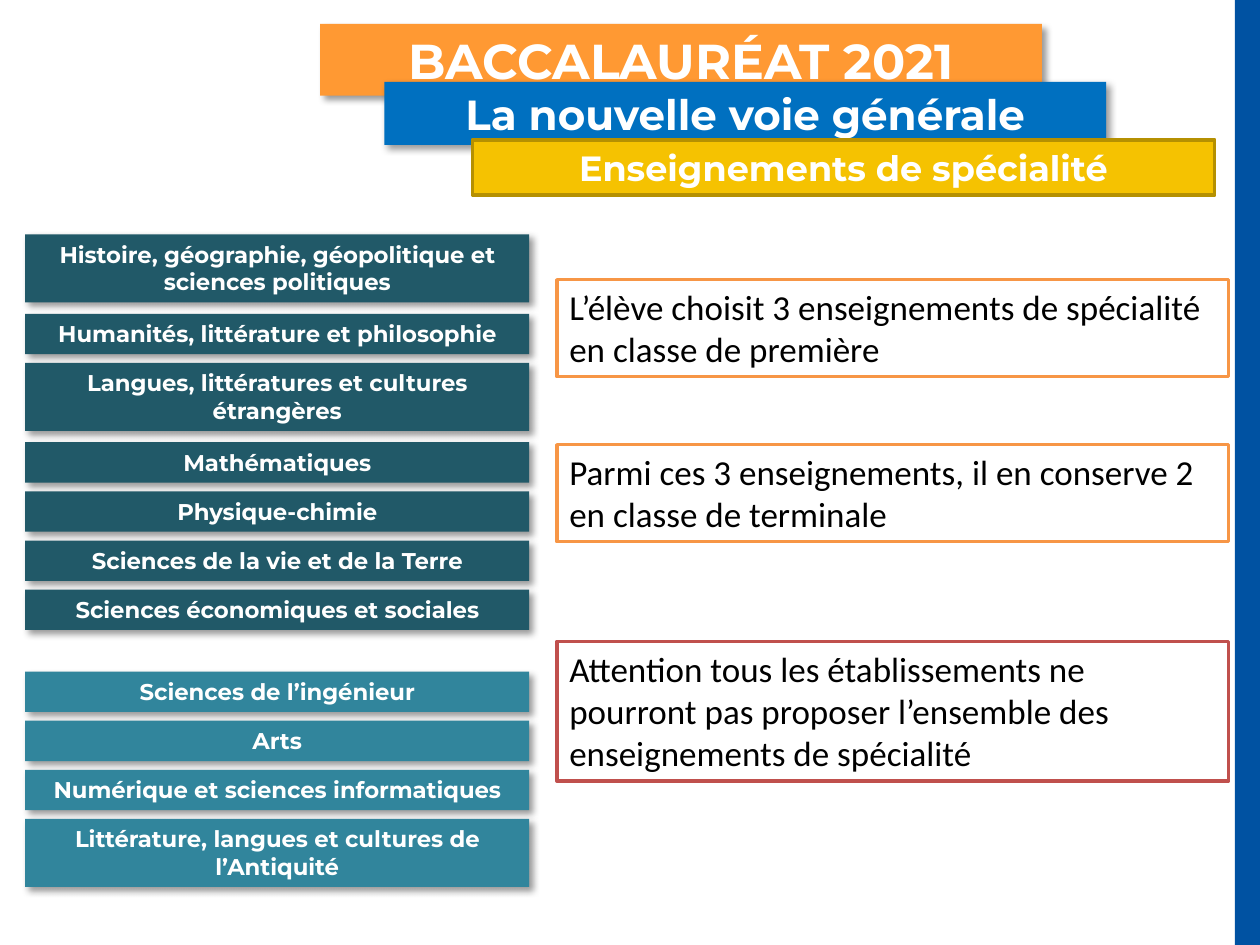
from lxml import etree
from pptx import Presentation
from pptx.dml.color import RGBColor
from pptx.enum.shapes import MSO_SHAPE
from pptx.enum.text import MSO_ANCHOR, MSO_AUTO_SIZE, PP_ALIGN
from pptx.oxml.ns import qn
from pptx.util import Inches, Pt

RECT = MSO_SHAPE.RECTANGLE
TOP = MSO_ANCHOR.TOP
GROW = MSO_AUTO_SIZE.SHAPE_TO_FIT_TEXT
LEFT, CENTER = PP_ALIGN.LEFT, PP_ALIGN.CENTER

DARK_TEAL, TEAL = "215968", "31859C"
ORANGE, RED = "F79646", "C0504D"

# Title banners: text, position and size, fill, line, text size
BANNERS = [
    ("BACCALAURÉAT 2021", (2.54, 0.19, 5.73, 0.57), "FF9933", None, 28),
    ("La nouvelle voie générale", (3.05, 0.65, 5.73, 0.5), "0070C0", None, 24),
    ("Enseignements de spécialité", (3.75, 1.11, 5.89, 0.44), "F5C201", "B59001", 20),
]

# Subjects: text, number of lines
COMMON_SUBJECTS = [
    ("Histoire, géographie, géopolitique et sciences politiques", 2),
    ("Humanités, littérature et philosophie", 1),
    ("Langues, littératures et cultures étrangères", 2),
    ("Mathématiques", 1),
    ("Physique-chimie", 1),
    ("Sciences de la vie et de la Terre", 1),
    ("Sciences économiques et sociales", 1),
]
OTHER_SUBJECTS = [
    ("Sciences de l’ingénieur", 1),
    ("Arts", 1),
    ("Numérique et sciences informatiques", 1),
    ("Littérature, langues et cultures de l’Antiquité", 2),
]
SUBJECT_HEIGHT = {1: 0.32, 2: 0.54}
SUBJECT_PITCH = {1: 0.39, 2: 0.63}

# Notes: text, top, height, line
NOTES = [
    ("L’élève choisit 3 enseignements de spécialité en classe de première",
     2.22, 0.77, ORANGE),
    ("Parmi ces 3 enseignements, il en conserve 2 en classe de terminale",
     3.53, 0.77, ORANGE),
    ("Attention tous les établissements ne pourront pas proposer l’ensemble "
     "des enseignements de spécialité", 5.09, 1.11, RED),
]


def rgb(value):
    return RGBColor.from_string(value)


def add_rect(s, box, fill=None, line=None):
    sp = s.shapes.add_shape(RECT, *map(Inches, box))
    sp.shadow.inherit = False
    if fill:
        sp.fill.solid()
        sp.fill.fore_color.rgb = rgb(fill)
    else:
        sp.fill.background()
    if line:
        sp.line.color.rgb = rgb(line)
        sp.line.width = Pt(2)
    else:
        sp.line.fill.background()
    return sp


def add_shadow(sp):
    effects = sp._element.spPr.find(qn("a:effectLst"))
    shadow = etree.SubElement(effects, qn("a:outerShdw"), blurRad=str(Pt(4)),
                              dist=str(Pt(3)), dir="2700000", algn="tl",
                              rotWithShape="0")
    color = etree.SubElement(shadow, qn("a:srgbClr"), val="000000")
    etree.SubElement(color, qn("a:alpha"), val="40000")


def set_text(sp, text, align, color, **font):
    tf = sp.text_frame
    frame = {"word_wrap": True, "vertical_anchor": TOP, "auto_size": GROW}
    for name, value in frame.items():
        setattr(tf, name, value)
    p = tf.paragraphs[0]
    p.alignment = align
    r = p.add_run()
    r.text = text
    for name, value in font.items():
        setattr(r.font, name, value)
    r.font.color.rgb = rgb(color)


def add_label(s, text, box, fill, size, line=None):
    sp = add_rect(s, box, fill, line)
    if not line:
        add_shadow(sp)
    set_text(sp, text, CENTER, "FFFFFF", name="Montserrat", size=Pt(size), bold=True)


def add_subjects(s, subjects, top, fill):
    for text, lines in subjects:
        add_label(s, text, (0.2, top, 4, SUBJECT_HEIGHT[lines]), fill, 13)
        top += SUBJECT_PITCH[lines]


def add_note(s, text, top, height, line):
    sp = add_rect(s, (4.42, top, 5.33, height), line=line)
    set_text(sp, text, LEFT, "000000", name="Calibri", size=Pt(20))


def main():
    prs = Presentation()
    prs.slide_width, prs.slide_height = Inches(10), Inches(7.5)
    s = prs.slides.add_slide(prs.slide_layouts[6])

    # Side band
    add_rect(s, (9.8, 0, 0.2, 7.5), "0052A2")

    # Title banners
    for text, box, fill, line, size in BANNERS:
        add_label(s, text, box, fill, size, line)

    # Subject lists
    add_subjects(s, COMMON_SUBJECTS, 1.86, DARK_TEAL)
    add_subjects(s, OTHER_SUBJECTS, 5.33, TEAL)

    # Notes on the right
    for note in NOTES:
        add_note(s, *note)

    prs.save("out.pptx")


if __name__ == "__main__":
    main()
